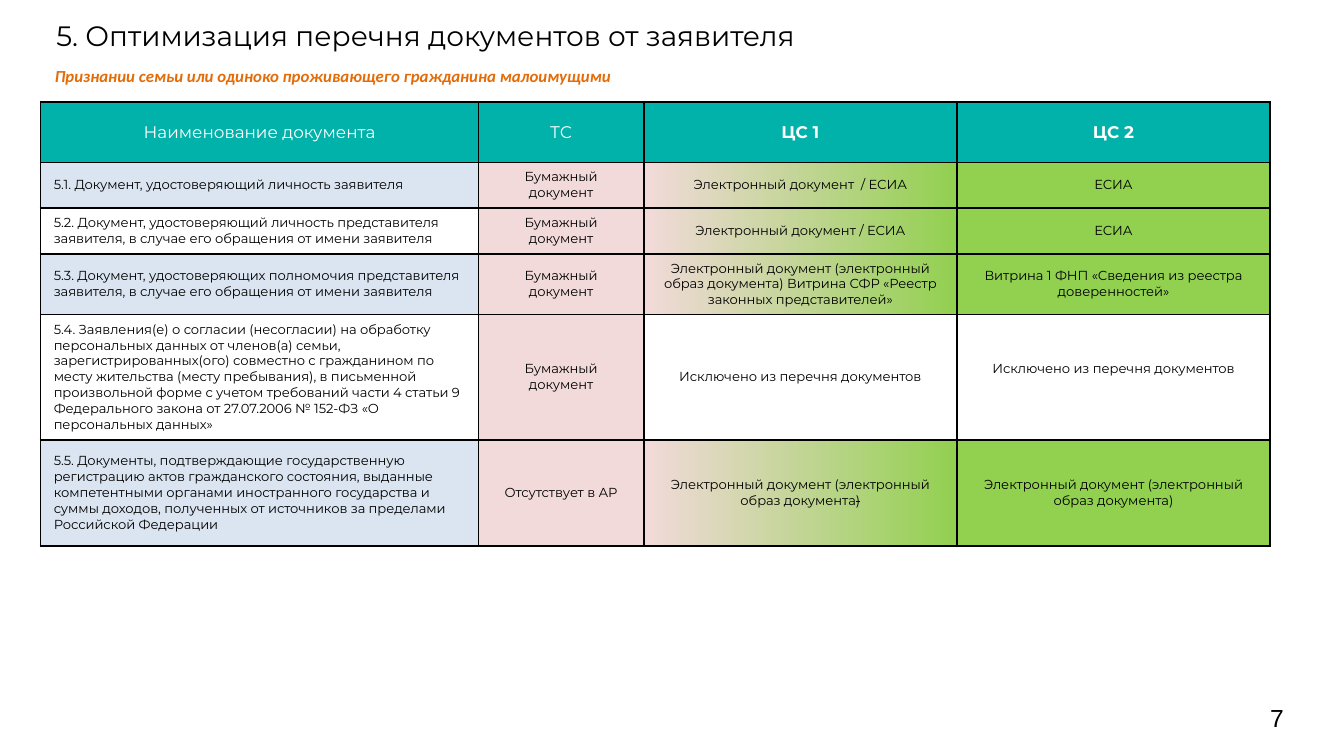
from lxml.etree import SubElement
from pptx import Presentation
from pptx.dml.color import RGBColor
from pptx.enum.text import MSO_ANCHOR as Anchor, PP_ALIGN as Align
from pptx.oxml import parse_xml
from pptx.oxml.ns import nsdecls, qn
from pptx.util import Pt

# Content
TITLE = "5. Оптимизация перечня документов от заявителя"
TOPIC = "Признании семьи или одиноко проживающего гражданина малоимущими"
PAGE = "7"
PAPER = "Бумажный документ"
OUT = "Исключено из перечня документов"
ROWS = [
    ["Наименование документа", "ТС", "ЦС 1", "ЦС 2"],
    ["5.1. Документ, удостоверяющий личность заявителя",
     PAPER, "Электронный документ  / ЕСИА", "ЕСИА"],
    ["5.2. Документ, удостоверяющий личность представителя заявителя, "
     "в случае его обращения от имени заявителя",
     PAPER, "Электронный документ / ЕСИА", "ЕСИА"],
    ["5.3. Документ, удостоверяющих полномочия представителя заявителя, "
     "в случае его обращения от имени заявителя",
     PAPER,
     "Электронный документ (электронный образ документа) "
     "Витрина СФР «Реестр законных представителей»",
     "Витрина 1 ФНП «Сведения из реестра доверенностей»"],
    ["5.4. Заявления(е) о согласии (несогласии) на обработку персональных "
     "данных от членов(а) семьи, зарегистрированных(ого) совместно с "
     "гражданином по месту жительства (месту пребывания), в письменной "
     "произвольной форме с учетом требований части 4 статьи 9 Федерального "
     "закона от 27.07.2006 № 152-ФЗ «О персональных данных»",
     PAPER, OUT, OUT],
    ["5.5. Документы, подтверждающие государственную регистрацию актов "
     "гражданского состояния, выданные компетентными органами иностранного "
     "государства и суммы доходов, полученных от источников за пределами "
     "Российской Федерации",
     "Отсутствует в АР",
     "Электронный документ (электронный образ документа",
     "Электронный документ (электронный образ документа)"],
]
WIDTHS = [234.72, 88.56, 167.76, 167.76]
HEIGHTS = [32.2, 24.5, 24.5, 32.6, 67.2, 56.8]

# Colours
BLACK, WHITE = "000000", "FFFFFF"
TEAL, BLUE, PINK, GREEN, ORANGE = "00B2A9", "4F81BD", "F2DADA", "92D050", "E36C09"


def color(code):
    return RGBColor.from_string(code)


def style(run, size, code, face="Montserrat", bold=False, slant=False):
    font = run.font
    font.size, font.name, font.bold, font.italic = Pt(size), face, bold, slant
    font.color.rgb = color(code)


def label(text, box, pad, look, anchor=Anchor.TOP):
    frame = slide.shapes.add_textbox(*map(Pt, box)).text_frame
    frame.word_wrap = True
    frame.vertical_anchor = anchor
    frame.margin_left = frame.margin_right = Pt(pad)
    frame.margin_top = frame.margin_bottom = Pt(pad / 2)
    frame.text = text
    style(frame.paragraphs[0].runs[0], **look)


def border(cell):
    props = cell._tc.get_or_add_tcPr()
    for i, side in enumerate("LRTB"):
        props.insert(i, parse_xml(
            f'<a:ln{side} {nsdecls("a")} w="{Pt(1)}"><a:solidFill>'
            f'<a:srgbClr val="{BLACK}"/></a:solidFill></a:ln{side}>'))


def paint(cell, row, col):
    fill = cell.fill
    if col == 0 and row in (2, 4):
        fill.background()
    elif col == 2 and row in (1, 2, 3, 5):
        fill.gradient()
        fill.gradient_angle = 180
        for stop, code in zip(fill.gradient_stops, (GREEN, PINK)):
            stop.color.rgb = color(code)
    else:
        fill.solid()
        code = TEAL if row == 0 else (BLUE, PINK, GREEN, GREEN)[col]
        if row == 4 and col > 1:
            code = WHITE
        fill.fore_color.rgb = color(code)
        if code == BLUE:
            tint = cell._tc.tcPr.find(".//" + qn("a:srgbClr"))
            SubElement(tint, qn("a:alpha"), val="20000")


deck = Presentation()
deck.slide_width, deck.slide_height = Pt(720), Pt(405)
slide = deck.slides.add_slide(deck.slide_layouts[6])

# Page number
label(PAGE, (680.4, 373.7, 33.8, 21.6), 0,
      dict(size=13.2, code=BLACK, face="Arial"), Anchor.MIDDLE)

# Table of documents
grid = slide.shapes.add_table(len(ROWS), len(WIDTHS), Pt(21.6), Pt(54.8),
                              Pt(sum(WIDTHS)), Pt(sum(HEIGHTS))).table
grid.first_row = grid.horz_banding = False
for part, width in zip(grid.columns, WIDTHS):
    part.width = Pt(width)
for part, height in zip(grid.rows, HEIGHTS):
    part.height = Pt(height)
for r, row in enumerate(ROWS):
    for c, text in enumerate(row):
        cell = grid.cell(r, c)
        cell.text = text
        cell.vertical_anchor = Anchor.MIDDLE
        para = cell.text_frame.paragraphs[0]
        para.alignment = Align.LEFT if r and c == 0 else Align.CENTER
        if (r, c) == (5, 2):  # struck closing bracket
            mark = para.add_run()
            mark.text = ")"
            mark._r.get_or_add_rPr().set("strike", "sngStrike")
        for run in para.runs:
            style(run, 7 if r else 9, BLACK if r else WHITE,
                  bold=r == 0 and c > 1)
        paint(cell, r, c)
        border(cell)
grid.cell(4, 3).margin_bottom = Pt(12.2)  # sits a little higher

# Headings
label(TITLE, (30.2, 10.1, 504, 20.9), 0, dict(size=15, code=BLACK))
label(TOPIC, (22.3, 31.7, 563.8, 18), 7.2,
      dict(size=9, code=ORANGE, face="Calibri", bold=True, slant=True))

deck.save("out.pptx")
